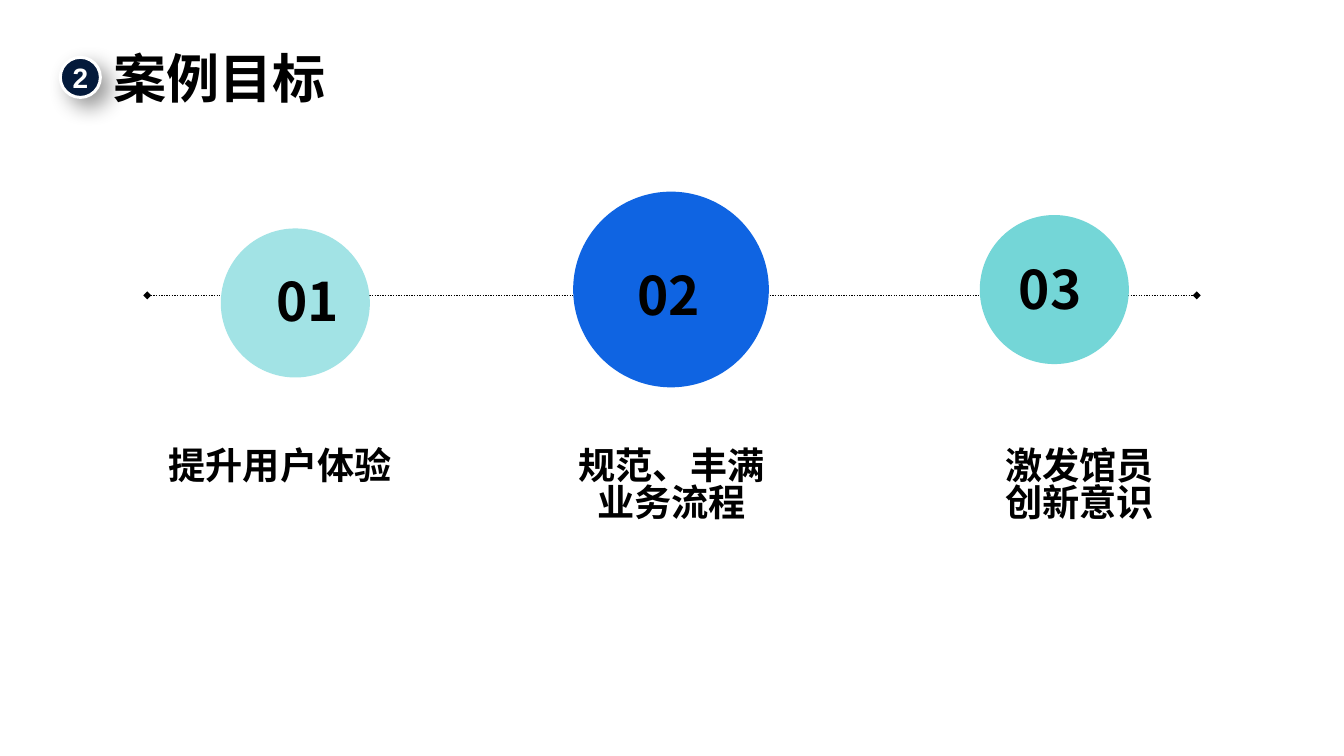
"""Build the case goals slide: three numbered circles along a dotted line."""
from lxml import etree
from pptx import Presentation
from pptx.dml.color import RGBColor
from pptx.enum.dml import MSO_LINE
from pptx.enum.shapes import MSO_CONNECTOR, MSO_SHAPE
from pptx.enum.text import MSO_ANCHOR, PP_ALIGN
from pptx.oxml.ns import qn
from pptx.util import Pt

BLACK = RGBColor(0x00, 0x00, 0x00)
WHITE = RGBColor(0xFF, 0xFF, 0xFF)
NAVY = RGBColor(0x04, 0x1A, 0x3B)
BLUE = RGBColor(0x0F, 0x64, 0xE2)
PALE = RGBColor(0xA2, 0xE3, 0xE5)
TEAL = RGBColor(0x74, 0xD6, 0xD7)
LEFT, CENTER = PP_ALIGN.LEFT, PP_ALIGN.CENTER
TOP, MIDDLE = MSO_ANCHOR.TOP, MSO_ANCHOR.MIDDLE
OVAL = MSO_SHAPE.OVAL
SANS, ARIAL = "Noto Sans CJK SC", "Arial"
TIGHT = 0.82


def write(shape, lines, size, font, color, align, anchor, insets, space):
    frame = shape.text_frame
    frame.word_wrap = True
    frame.vertical_anchor = anchor
    side, top, base = insets
    frame.margin_left = frame.margin_right = Pt(side)
    frame.margin_top, frame.margin_bottom = Pt(top), Pt(base)
    for i, line in enumerate(lines):
        para = frame.add_paragraph() if i else frame.paragraphs[0]
        para.alignment = align
        para.line_spacing = space
        run = para.add_run()
        run.text = line
        run.font.size = Pt(size)
        run.font.bold = True
        run.font.name = font
        run.font.color.rgb = color
        props = run.font._element
        props.set("lang", "zh-CN")
        etree.SubElement(props, qn("a:ea"), typeface=SANS)


def circle(left, top, size, fill, edge, width):
    shape = slide.shapes.add_shape(OVAL, Pt(left), Pt(top), Pt(size), Pt(size))
    shape.shadow.inherit = False
    shape.fill.solid()
    shape.fill.fore_color.rgb = fill
    if edge is None:
        shape.line.fill.background()
    else:
        shape.line.color.rgb = edge
        shape.line.width = Pt(width)
    return shape


deck = Presentation()
deck.slide_width, deck.slide_height = Pt(1012.3), Pt(569.5)
slide = deck.slides.add_slide(deck.slide_layouts[6])

axis = slide.shapes.add_connector(
    MSO_CONNECTOR.STRAIGHT, Pt(110.9), Pt(222.5), Pt(901.4), Pt(222.5))
axis.line.color.rgb = BLACK
axis.line.width = Pt(1)
axis.line.dash_style = MSO_LINE.ROUND_DOT
for end in ("a:headEnd", "a:tailEnd"):
    etree.SubElement(axis.line._get_or_add_ln(), qn(end), type="diamond")
etree.SubElement(axis._element.spPr, qn("a:effectLst"))

for left, top, size, fill, edge in (
    (166.3, 172.1, 112.3, PALE, None),
    (432.7, 145.4, 145.4, BLUE, BLUE),
    (738, 162, 112.3, TEAL, None),
):
    circle(left, top, size, fill, edge, 2)

for lines, left, top, width, height, size, align in (
    (["提升用户体验"], 106.6, 333.4, 208.8, 41, 28, CENTER),
    (["规范、丰满业务流程"], 415.4, 333.4, 180.7, 74.9, 28, CENTER),
    (["激发馆员", "创新意识"], 725.8, 333.4, 174.2, 74.9, 28, CENTER),
    (["01"], 200.9, 203.8, 66.2, 55.4, 40, LEFT),
    (["02"], 473, 198.7, 66.2, 55.4, 40, LEFT),
    (["03"], 760.3, 194.4, 66.2, 55.4, 40, LEFT),
):
    box = slide.shapes.add_textbox(Pt(left), Pt(top), Pt(width), Pt(height))
    insets = (7.2, 3.6 + 0.09 * size, 3.6)
    write(box, lines, size, SANS, BLACK, align, TOP, insets, TIGHT)

title = slide.shapes.add_textbox(Pt(85.7), Pt(33.8), Pt(212.4), Pt(48.2))
write(title, ["案例目标"], 40, ARIAL, BLACK, LEFT, MIDDLE, (0, 0, 0), 1.0)

badge = circle(45.4, 43.2, 30.2, NAVY, WHITE, 2.25)
write(badge, ["2"], 21.1, ARIAL, WHITE, CENTER, MIDDLE, (0, 0, 0), 1.0)
glow = etree.SubElement(
    badge._element.spPr.find(qn("a:effectLst")), qn("a:outerShdw"),
    blurRad=str(Pt(16)), dist=str(Pt(9)), dir="2700000", algn="tl", rotWithShape="0")
tint = etree.SubElement(glow, qn("a:srgbClr"), val=str(BLACK))
etree.SubElement(tint, qn("a:alpha"), val="40000")

deck.save("out.pptx")
